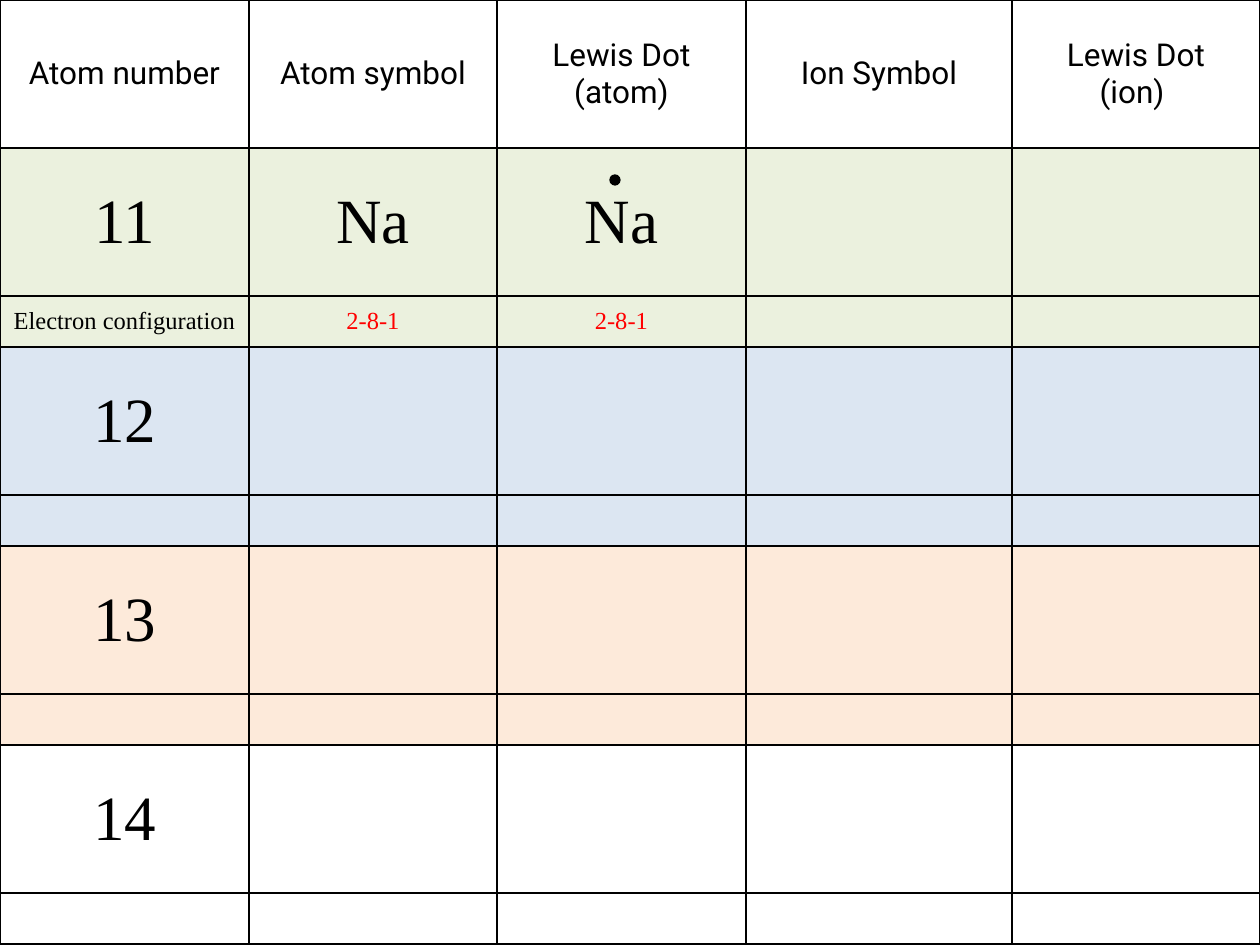
from dataclasses import dataclass

from lxml import etree
from pptx import Presentation
from pptx.dml.color import RGBColor
from pptx.enum.shapes import MSO_SHAPE
from pptx.enum.text import MSO_ANCHOR, PP_ALIGN
from pptx.oxml.ns import qn
from pptx.util import Emu, Pt

PX = 914400 // 126
OVAL = MSO_SHAPE.OVAL
CENTER = PP_ALIGN.CENTER
MIDDLE = MSO_ANCHOR.MIDDLE

BLACK = "000000"
RED = "FF0000"
GREEN = "EBF1DE"
BLUE = "DCE6F2"
PEACH = "FDEADA"

COLUMN_WIDTHS = (249, 248, 249, 266, 248)
TALL, SHORT = 148, 51
MARGIN_X, MARGIN_Y = 6, 4


@dataclass
class Style:
    size: int
    font: str = "Times New Roman"
    color: str = BLACK


HEADING = Style(18, "Roboto")
SYMBOL = Style(36)
LABEL = Style(14)
CONFIGURATION = Style(14, color=RED)


@dataclass
class Row:
    height: int
    fill: str | None
    texts: tuple[str, ...]
    first: Style
    rest: Style


@dataclass
class Element:
    fill: str | None
    symbols: tuple[str, ...]
    configurations: tuple[str, ...] = ()


HEADINGS = ("Atom number", "Atom symbol", "Lewis Dot\n(atom)",
            "Ion Symbol", "Lewis Dot\n(ion) ")
ELEMENTS = (
    Element(GREEN, ("11", "Na", "Na"),
            ("Electron configuration", "2-8-1", "2-8-1")),
    Element(BLUE, ("12",)),
    Element(PEACH, ("13",)),
    Element(None, ("14",)),
)


def px(n: int) -> Emu:
    return Emu(n * PX)


def rgb(value: str) -> RGBColor:
    return RGBColor.from_string(value)


def add_borders(cell) -> None:
    """Put a thin black line on each side, ahead of the fill in the cell XML."""
    props = cell._tc.get_or_add_tcPr()
    for i, side in enumerate(("a:lnL", "a:lnR", "a:lnT", "a:lnB")):
        line = etree.Element(qn(side), w=str(Pt(1)))
        fill = etree.SubElement(line, qn("a:solidFill"))
        etree.SubElement(fill, qn("a:srgbClr"), val=BLACK)
        props.insert(i, line)


def format_cell(cell, text: str, style: Style, fill: str | None) -> None:
    cell.vertical_anchor = MIDDLE
    cell.margin_left = cell.margin_right = px(MARGIN_X)
    cell.margin_top = cell.margin_bottom = px(MARGIN_Y)
    if fill:
        cell.fill.solid()
        cell.fill.fore_color.rgb = rgb(fill)
    else:
        cell.fill.background()
    add_borders(cell)
    p = cell.text_frame.paragraphs[0]
    p.text = text
    p.alignment = CENTER
    for r in p.runs:
        r.font.size = Pt(style.size)
        r.font.name = style.font
        r.font.color.rgb = rgb(style.color)


def table_rows() -> list[Row]:
    rows = [Row(TALL, None, HEADINGS, HEADING, HEADING)]
    for e in ELEMENTS:
        rows.append(Row(TALL, e.fill, e.symbols, SYMBOL, SYMBOL))
        rows.append(Row(SHORT, e.fill, e.configurations, LABEL, CONFIGURATION))
    return rows


def add_atom_table(s, rows: list[Row]) -> None:
    height = sum(row.height for row in rows)
    table = s.shapes.add_table(len(rows), len(COLUMN_WIDTHS), 0, 0,
                               px(sum(COLUMN_WIDTHS)), px(height)).table
    table.first_row = table.horz_banding = False
    for column, width in zip(table.columns, COLUMN_WIDTHS):
        column.width = px(width)
    for i, row in enumerate(rows):
        table.rows[i].height = px(row.height)
        for j in range(len(COLUMN_WIDTHS)):
            text = row.texts[j] if j < len(row.texts) else ""
            format_cell(table.cell(i, j), text,
                        row.rest if j else row.first, row.fill)


def add_electron(s, left: int, top: int, size: int) -> None:
    sp = s.shapes.add_shape(OVAL, px(left), px(top), px(size), px(size))
    sp.shadow.inherit = False
    sp.fill.solid()
    sp.fill.fore_color.rgb = rgb(BLACK)
    sp.line.color.rgb = rgb(BLACK)
    sp.line.width = Pt(0.75)


def main() -> None:
    prs = Presentation()
    prs.slide_width, prs.slide_height = px(1260), px(945)
    s = prs.slides.add_slide(prs.slide_layouts[6])
    add_atom_table(s, table_rows())
    add_electron(s, 610, 175, 10)
    prs.save("out.pptx")


if __name__ == "__main__":
    main()
